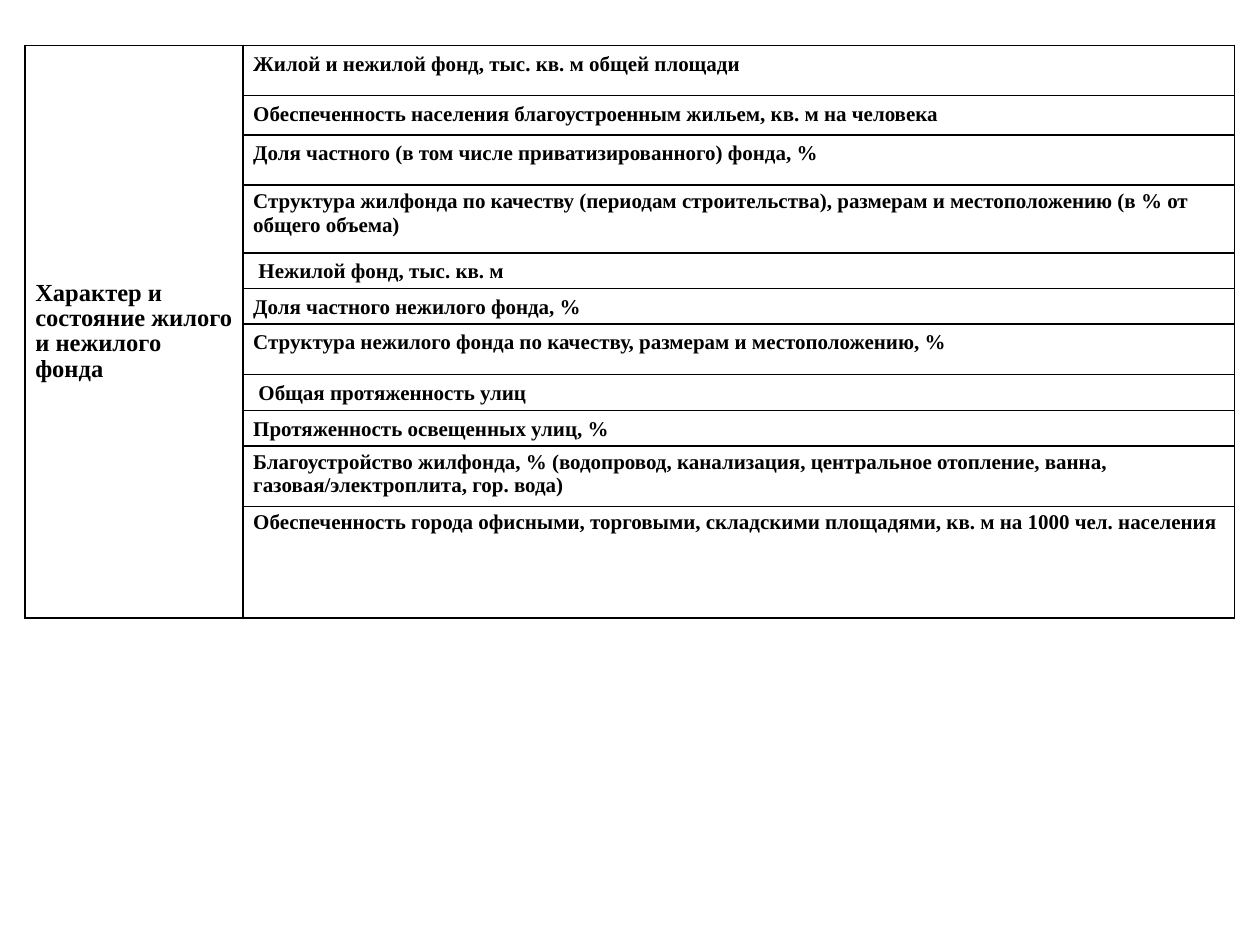
from dataclasses import dataclass

from lxml import etree
from pptx import Presentation
from pptx import util as u
from pptx.dml.color import RGBColor
from pptx.enum import text
from pptx.oxml.ns import qn


@dataclass(frozen=True)
class Theme:
    font: str = "Times New Roman"
    ink: str = "000000"
    heading_size: float = 14
    body_size: float = 12
    border: float = 1


@dataclass(frozen=True)
class Indicator:
    label: str
    height: float  # inches
    leading: float | None = 14.5  # points; None is single spacing


THEME = Theme()
SLIDE_WIDTH, SLIDE_HEIGHT = 10, 7.5
TABLE_LEFT, TABLE_TOP = 0.2, 0.36
COLUMNS = (1.73, 7.87)
INSET_X, INSET_Y = 0.08, 0.04
LOW, MIDDLE, TALL = 0.24, 0.31, 0.4

HEADING = "Характер и состояние жилого и нежилого фонда"
INDICATORS = [
    Indicator("Жилой и нежилой фонд, тыс. кв. м общей площади", TALL),
    Indicator("Обеспеченность населения благоустроенным жильем, кв. м на человека", MIDDLE),
    Indicator("Доля частного (в том числе приватизированного) фонда, %", TALL, 14.7),
    Indicator("Структура жилфонда по качеству (периодам строительства), "
              "размерам и местоположению (в % от общего объема)", 0.54, None),
    Indicator(" Нежилой фонд, тыс. кв. м", LOW),
    Indicator("Доля частного нежилого фонда, %", LOW),
    Indicator("Структура нежилого фонда по качеству, размерам и местоположению, %", TALL),
    Indicator(" Общая протяженность улиц", LOW, 14.7),
    Indicator("Протяженность освещенных улиц, %", LOW),
    Indicator("Благоустройство жилфонда, % (водопровод, канализация, "
              "центральное отопление, ванна, газовая/электроплита, гор. вода)", 0.48, None),
    Indicator("Обеспеченность города офисными, торговыми, складскими площадями, "
              "кв. м на 1000 чел. населения", 0.28, None),
]


def style_cell(cell) -> None:
    """Give a cell its insets, four borders and an empty fill."""
    cell.margin_left = cell.margin_right = u.Inches(INSET_X)
    cell.margin_top = cell.margin_bottom = u.Inches(INSET_Y)
    properties = cell._tc.get_or_add_tcPr()
    for side in ("a:lnL", "a:lnR", "a:lnT", "a:lnB"):
        line = etree.SubElement(properties, qn(side), w=str(u.Pt(THEME.border)))
        fill = etree.SubElement(line, qn("a:solidFill"))
        etree.SubElement(fill, qn("a:srgbClr"), val=THEME.ink)
    cell.fill.background()


def write_cell(cell, label: str, size: float, leading: float | None) -> None:
    para = cell.text_frame.paragraphs[0]
    if leading:
        para.line_spacing = u.Pt(leading)
    span = para.add_run()
    span.text = label
    span.font.name = THEME.font
    span.font.size = u.Pt(size)
    span.font.bold = True
    span.font.color.rgb = RGBColor.from_string(THEME.ink)


def add_indicator_table(page) -> None:
    frame = page.shapes.add_table(
        len(INDICATORS), len(COLUMNS),
        u.Inches(TABLE_LEFT), u.Inches(TABLE_TOP), u.Inches(sum(COLUMNS)),
        u.Inches(sum(item.height for item in INDICATORS)))
    table = frame.table
    table.first_row = table.horz_banding = False
    for column, width in zip(table.columns, COLUMNS):
        column.width = u.Inches(width)
    for cell in table.iter_cells():
        style_cell(cell)

    # Heading spans every row of the first column
    heading = table.cell(0, 0)
    heading.merge(table.cell(len(INDICATORS) - 1, 0))
    heading.vertical_anchor = text.MSO_ANCHOR.MIDDLE
    write_cell(heading, HEADING, THEME.heading_size, 14.5)

    # One indicator per row
    for index, item in enumerate(INDICATORS):
        table.rows[index].height = u.Inches(item.height)
        write_cell(table.cell(index, 1), item.label, THEME.body_size, item.leading)


def main() -> None:
    deck = Presentation()
    deck.slide_width = u.Inches(SLIDE_WIDTH)
    deck.slide_height = u.Inches(SLIDE_HEIGHT)
    page = deck.slides.add_slide(deck.slide_layouts[6])
    add_indicator_table(page)
    deck.save("out.pptx")


if __name__ == "__main__":
    main()
